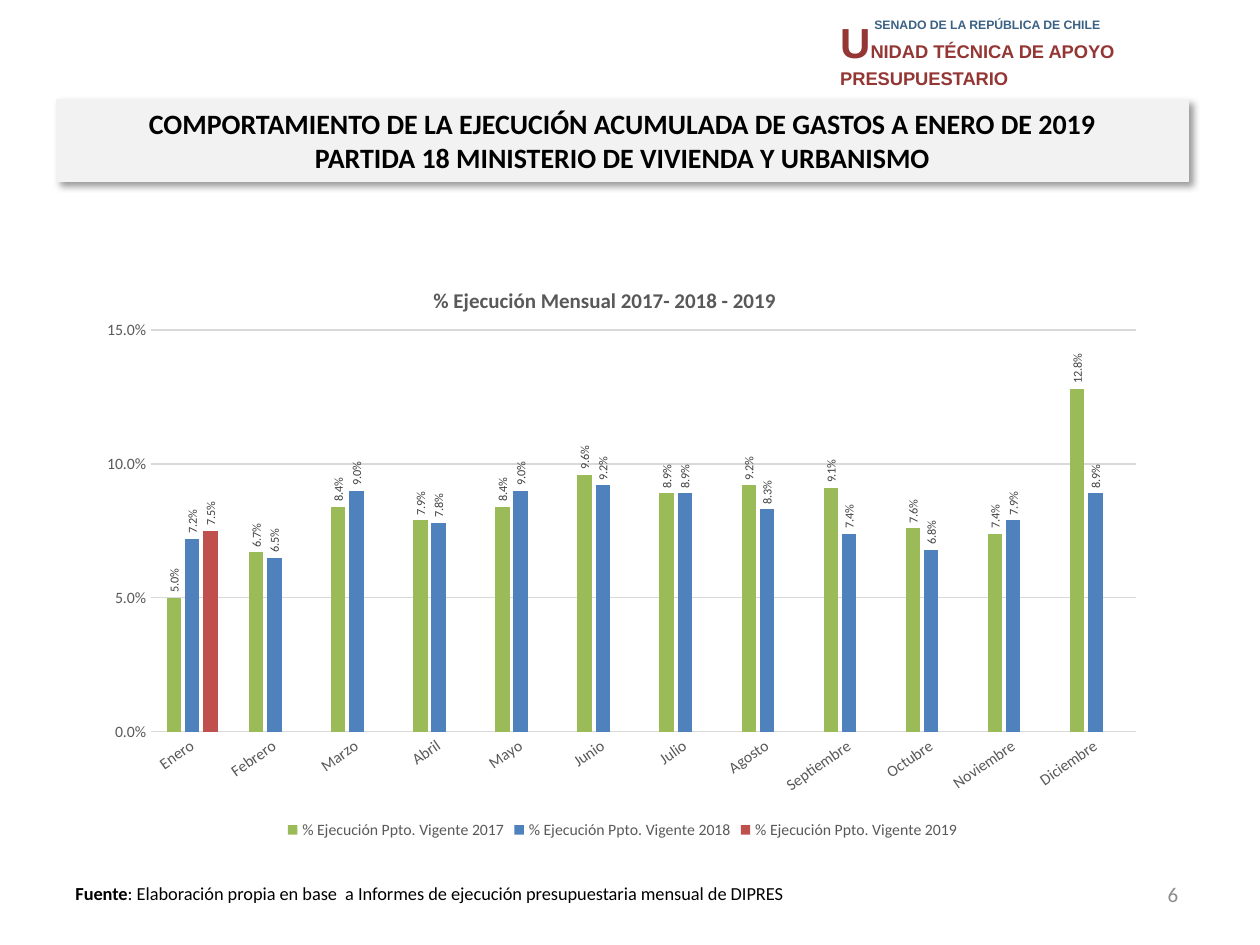
from pptx import Presentation
from pptx.util import Inches, Pt
from pptx.dml.color import RGBColor as RGB
from pptx.chart.data import CategoryChartData as Data
from pptx.enum.chart import XL_CHART_TYPE as Kind, XL_LEGEND_POSITION as Place
from pptx.enum.chart import XL_LABEL_POSITION as Spot, XL_TICK_MARK as Tick
from pptx.enum.text import PP_ALIGN as Align, MSO_ANCHOR as Anchor
from pptx.oxml import parse_xml
from pptx.oxml.ns import qn, nsdecls


def style(font, size, color, bold=False, face="Calibri"):
    font.size, font.bold, font.name = Pt(size), bold, face
    font.color.rgb = RGB.from_string(color)


def arrange(node, index, **sides):
    for old in node.findall(qn("c:layout")):
        node.remove(old)
    inner = '<c:layoutTarget val="inner"/>' if "w" in sides else ""
    modes = "".join(f'<c:{s}Mode val="edge"/>' for s in "xy")
    sizes = "".join(f'<c:{s} val="{v}"/>' for s, v in sides.items())
    node.insert(index, parse_xml(
        f'<c:layout {nsdecls("c")}><c:manualLayout>{inner}{modes}{sizes}'
        '</c:manualLayout></c:layout>'))


prs = Presentation()
prs.slide_width, prs.slide_height = Inches(10), Inches(7.5)
slide = prs.slides.add_slide(prs.slide_layouts[5])
shapes = slide.shapes

title = shapes.title
title.left, title.top = Inches(0.45), Inches(0.79)
title.width, title.height = Inches(8.98), Inches(0.65)
title.fill.solid()
title.fill.fore_color.rgb = RGB.from_string("F2F2F2")
title.line.color.rgb = RGB.from_string("F2F2F2")
title.line.width = Pt(0.75)
title._element.spPr.append(parse_xml(
    f'<a:effectLst {nsdecls("a")}><a:outerShdw blurRad="50800" dist="38100" '
    'dir="2700000" algn="tl" rotWithShape="0"><a:srgbClr val="000000">'
    '<a:alpha val="40000"/></a:srgbClr></a:outerShdw></a:effectLst>'))
frame = title.text_frame
frame.vertical_anchor = Anchor.MIDDLE
para = frame.paragraphs[0]
para.alignment = Align.CENTER
lines = ["COMPORTAMIENTO DE LA EJECUCIÓN ACUMULADA DE GASTOS A ENERO DE 2019",
         "PARTIDA 18 MINISTERIO DE VIVIENDA Y URBANISMO"]
for i, line in enumerate(lines):
    if i:
        para.add_line_break()
    run = para.add_run()
    run.text = line
    style(run.font, 16, "000000", True)

red = "943634"
boxes = [
    ((6.73, 0.09, 2.39, 0.18), (0.21, 0.05), Anchor.TOP, Align.LEFT,
     [("SENADO DE LA REPÚBLICA DE CHILE", 7, "3B6285", True, "Arial")]),
    ((6.57, 0.05, 3.31, 0.5), (0.1, 0.08), Anchor.TOP, Align.LEFT,
     [("U", 24, red, True, "Arial"),
      ("NIDAD TÉCNICA DE APOYO PRESUPUESTARIO", 10.5, red, True, "Arial")]),
    ((0.5, 6.95, 5.91, 0.28), (0.1, 0.05), Anchor.TOP, Align.LEFT,
     [("Fuente", 10.5, "000000", True),
      (": Elaboración propia en base  a Informes de ejecución presupuestaria "
       "mensual de DIPRES", 10.5, "000000")]),
    ((7.12, 6.9, 2.33, 0.4), (0.1, 0.05), Anchor.MIDDLE, Align.RIGHT,
     [("6", 12, "8C8C8C")]),
]
for area, (left, top), anchor, align, runs in boxes:
    frame = shapes.add_textbox(*map(Inches, area)).text_frame
    frame.word_wrap = True
    frame.vertical_anchor = anchor
    frame.margin_left, frame.margin_top = Inches(left), Inches(top)
    para = frame.paragraphs[0]
    para.alignment = align
    for text, *look in runs:
        run = para.add_run()
        run.text = text
        style(run.font, *look)

data = Data(number_format="0.0%")
data.categories = ["Enero", "Febrero", "Marzo", "Abril", "Mayo", "Junio", "Julio",
                   "Agosto", "Septiembre", "Octubre", "Noviembre", "Diciembre"]
years = {
    2017: ("9BBB59", [0.05, 0.067, 0.084, 0.079, 0.084, 0.096,
                      0.089, 0.092, 0.091, 0.076, 0.074, 0.128]),
    2018: ("4F81BD", [0.072, 0.065, 0.09, 0.078, 0.09, 0.092,
                      0.089, 0.083, 0.074, 0.068, 0.079, 0.089]),
    2019: ("C0504D", [0.075] + [None] * 11),
}
for year, (color, vals) in years.items():
    data.add_series(f"% Ejecución Ppto. Vigente {year}", vals)
chart = shapes.add_chart(Kind.COLUMN_CLUSTERED, Inches(0.69), Inches(2.01),
                         Inches(8.5), Inches(4.69), data).chart
style(chart.font, 10, "000000")

chart.has_title = True
run = chart.chart_title.text_frame.paragraphs[0].add_run()
run.text = "% Ejecución Mensual 2017- 2018 - 2019"
style(run.font, 12, "595959", True)
arrange(chart.chart_title._element, 1, x=0.32, y=0.05)
arrange(chart._chartSpace.chart.plotArea, 0, x=0.06, y=0.13, w=0.92, h=0.68)

chart.has_legend = True
chart.legend.position = Place.BOTTOM
chart.legend.include_in_layout = False
style(chart.legend.font, 9, "595959")

months, rate = chart.category_axis, chart.value_axis
for axis in (months, rate):
    axis.major_tick_mark = axis.minor_tick_mark = Tick.NONE
    style(axis.tick_labels.font, 9, "595959")
months._element.txPr.bodyPr.set("rot", "-2100000")
rate.minimum_scale, rate.maximum_scale, rate.major_unit = 0, 0.15, 0.05
rate.tick_labels.number_format = "0.0%"
rate.tick_labels.number_format_is_linked = False
rate.format.line.fill.background()
rate.has_major_gridlines = True
for line in (months.format.line, rate.major_gridlines.format.line):
    line.color.rgb = RGB.from_string("D9D9D9")
    line.width = Pt(0.75)

plot = chart.plots[0]
plot.gap_width, plot.overlap = 219, -27
plot.vary_by_categories = False
for series, (color, vals) in zip(plot.series, years.values()):
    series.format.fill.solid()
    series.format.fill.fore_color.rgb = RGB.from_string(color)
    labels = series.data_labels
    labels.show_value = True
    labels.position = Spot.OUTSIDE_END
    labels.number_format = "0.0%"
    labels.number_format_is_linked = False
    style(labels.font, 7, "404040")
    labels._element.find(qn("c:txPr")).bodyPr.set("rot", "-5400000")

prs.save("out.pptx")
